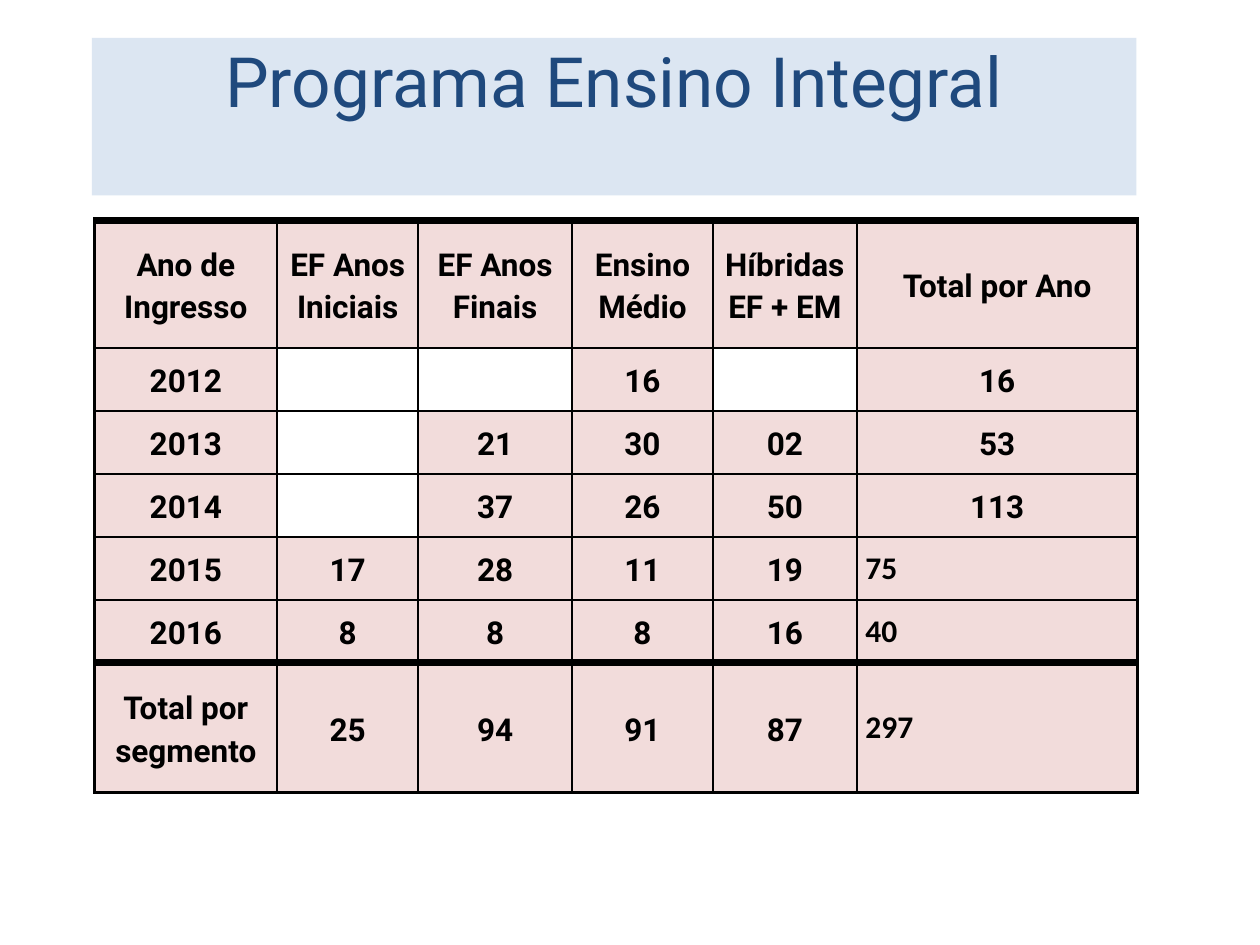
from dataclasses import dataclass

from lxml.etree import SubElement
from pptx import Presentation
from pptx.dml.color import RGBColor
from pptx.enum.text import MSO_ANCHOR, MSO_AUTO_SIZE, PP_ALIGN
from pptx.oxml.ns import qn
from pptx.util import Inches, Pt

COLORS = {
    "title_fill": "DCE6F2",
    "title_text": "1F497D",
    "cell": "F2DCDB",
    "empty": "FFFFFF",
    "text": "000000",
    "border": "000000",
}
THIN, THICK = 1.5, 4.5
COLUMN_WIDTHS = [1.45, 1.12, 1.22, 1.12, 1.14, 2.23]


@dataclass
class TableRow:
    cells: list[str]
    height: float = 0.5
    top_border: float = THIN
    bottom_border: float = THIN
    plain_total: bool = False  # total set left-aligned in Calibri


ROWS = [
    TableRow(["Ano de Ingresso", "EF Anos Iniciais", "EF Anos Finais", "Ensino Médio",
              "Híbridas\nEF + EM", "Total por Ano"], height=1.01, top_border=THICK),
    TableRow(["2012", "", "", "16", "", "16"]),
    TableRow(["2013", "", "21", "30", "02", "53"]),
    TableRow(["2014", "", "37", "26", "50", "113"]),
    TableRow(["2015", "17", "28", "11", "19", "75"], plain_total=True),
    TableRow(["2016", "8", "8", "8", "16", "40"], bottom_border=THICK, plain_total=True),
    TableRow(["Total por segmento", "25", "94", "91", "87", "297"], height=1.03,
             top_border=THICK, plain_total=True),
]


def write_text(text_frame, text: str, *, size: float = 18, font: str = "Roboto",
               color: str = "text", bold: bool = False, align=PP_ALIGN.CENTER,
               line_spacing: float = 1.0) -> None:
    text_frame.text = text
    for paragraph in text_frame.paragraphs:
        paragraph.alignment = align
        paragraph.line_spacing = line_spacing
        for run in paragraph.runs:
            run.font.name = font
            run.font.size = Pt(size)
            run.font.bold = bold
            run.font.color.rgb = RGBColor.from_string(COLORS[color])


def fill_solid(target, color: str) -> None:
    target.fill.solid()
    target.fill.fore_color.rgb = RGBColor.from_string(COLORS[color])


def set_borders(cell, top: float, bottom: float) -> None:
    properties = cell._tc.get_or_add_tcPr()
    widths = {"a:lnL": THIN, "a:lnR": THIN, "a:lnT": top, "a:lnB": bottom}
    for position, (tag, width) in enumerate(widths.items()):
        line = SubElement(properties, qn(tag), w=str(Pt(width)))
        solid_fill = SubElement(line, qn("a:solidFill"))
        SubElement(solid_fill, qn("a:srgbClr"), val=COLORS["border"])
        properties.insert(position, line)  # borders come before the cell fill


def add_title(slide) -> None:
    title = slide.shapes.title
    title.left, title.top = Inches(0.73), Inches(0.3)
    title.width, title.height = Inches(8.29), Inches(1.25)
    fill_solid(title, "title_fill")
    text_frame = title.text_frame
    text_frame.word_wrap = True
    text_frame.auto_size = MSO_AUTO_SIZE.NONE
    text_frame.vertical_anchor = MSO_ANCHOR.TOP
    text_frame.margin_top = 0
    write_text(text_frame, "Programa Ensino Integral", size=39.6, color="title_text")


def format_cell(cell, text: str, row: TableRow, plain: bool) -> None:
    cell.vertical_anchor = MSO_ANCHOR.MIDDLE
    cell.margin_left = cell.margin_right = Inches(0.07)
    cell.margin_top = cell.margin_bottom = 0
    if plain:
        write_text(cell.text_frame, text, font="Calibri", bold=True, align=PP_ALIGN.LEFT)
    elif text:
        write_text(cell.text_frame, text, bold=True, line_spacing=1.15)
    fill_solid(cell, "cell" if text else "empty")
    set_borders(cell, row.top_border, row.bottom_border)


def add_schools_table(slide) -> None:
    frame = slide.shapes.add_table(
        len(ROWS), len(COLUMN_WIDTHS), Inches(0.75), Inches(1.75),
        Inches(sum(COLUMN_WIDTHS)), Inches(sum(row.height for row in ROWS)))
    table = frame.table
    for column, width in zip(table.columns, COLUMN_WIDTHS):
        column.width = Inches(width)
    last_column = len(COLUMN_WIDTHS) - 1
    for row_index, row in enumerate(ROWS):
        table.rows[row_index].height = Inches(row.height)
        for column_index, text in enumerate(row.cells):
            plain = row.plain_total and column_index == last_column
            format_cell(table.cell(row_index, column_index), text, row, plain)


def main() -> None:
    presentation = Presentation()
    presentation.slide_width, presentation.slide_height = Inches(10), Inches(7.5)
    # Title-only layout
    slide = presentation.slides.add_slide(presentation.slide_layouts[5])
    add_title(slide)
    add_schools_table(slide)
    presentation.save("out.pptx")


if __name__ == "__main__":
    main()
